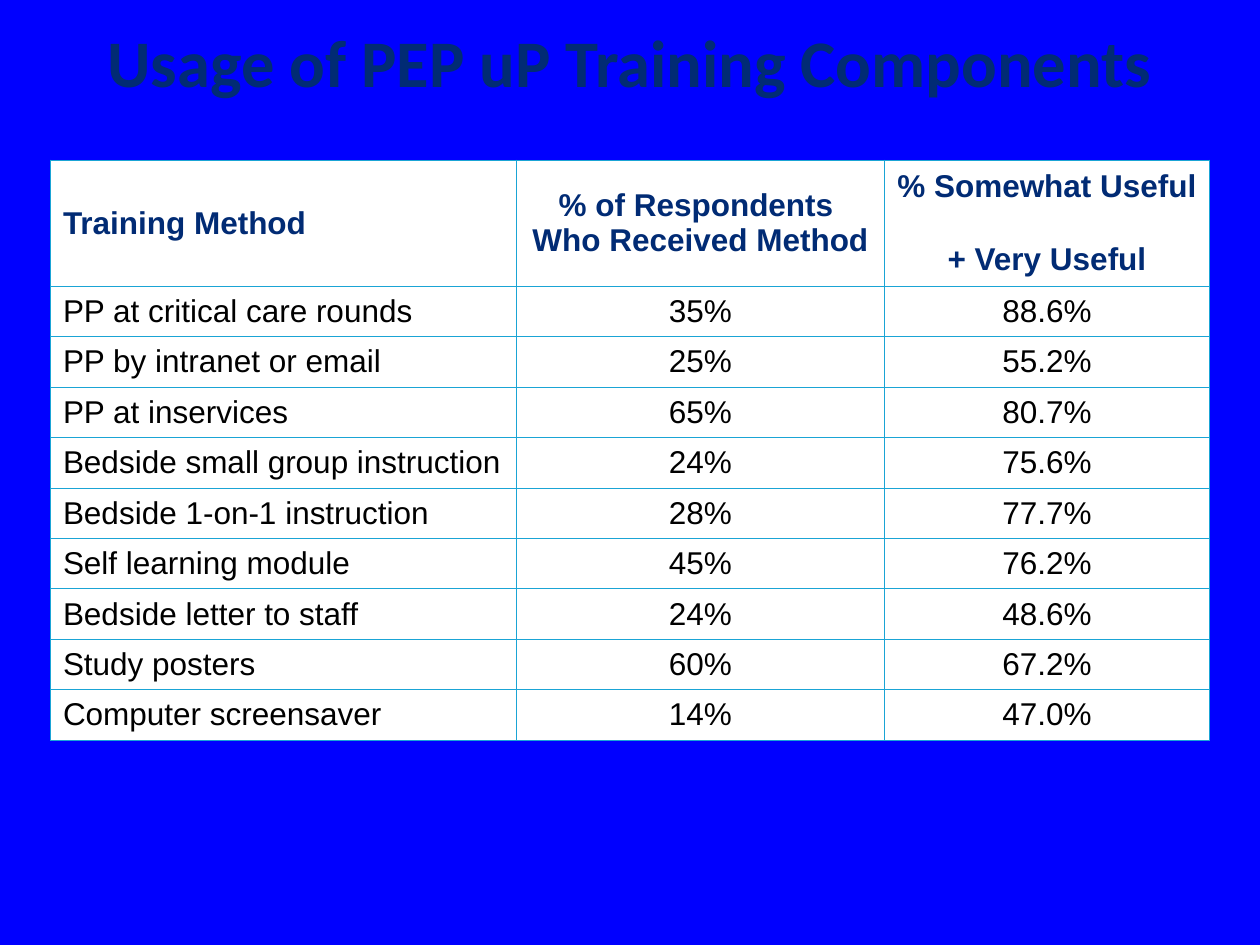
"""Build a slide with a table on the usage of training components."""
from lxml.etree import SubElement
from pptx import Presentation
from pptx.dml.color import RGBColor
from pptx.enum.text import MSO_ANCHOR as ANCHOR, PP_ALIGN as ALIGN
from pptx.oxml.ns import qn
from pptx.util import Pt

NAVY, WHITE, BLACK, BORDER, BLUE = "012B74", "FFFFFF", "000000", "1AA4D5", "0000FF"


def write(tf, text, size=18, font="Arial", color=BLACK, bold=False, align=None, spacing=None):
    tf.text = text
    for p in tf.paragraphs:
        p.alignment, p.line_spacing = align, spacing
        for r in p.runs:
            r.font.size, r.font.name, r.font.bold = Pt(size), font, bold
            r.font.color.rgb = RGBColor.from_string(color)


def style_cell(cell):
    cell.vertical_anchor = ANCHOR.MIDDLE
    cell.margin_left = cell.margin_right = Pt(7.2)
    cell.margin_top = cell.margin_bottom = Pt(3.6)
    tcPr = cell._tc.get_or_add_tcPr()
    for side in ("a:lnL", "a:lnR", "a:lnT", "a:lnB"):
        ln = SubElement(tcPr, qn(side), w=str(Pt(0.5)))
        SubElement(SubElement(ln, qn("a:solidFill")), qn("a:srgbClr"), val=BORDER)
    cell.fill.solid()
    cell.fill.fore_color.rgb = RGBColor.from_string(WHITE)


prs = Presentation()
prs.slide_width, prs.slide_height = Pt(720), Pt(540)
s = prs.slides.add_slide(prs.slide_layouts[6])
s.background.fill.solid()
s.background.fill.fore_color.rgb = RGBColor.from_string(BLUE)

tf = s.shapes.add_textbox(Pt(0), Pt(13), Pt(720), Pt(50.4)).text_frame
tf.word_wrap = True
tf.vertical_anchor = ANCHOR.MIDDLE
write(tf, "Usage of PEP uP Training Components", size=38, font="Calibri",
      color=NAVY, bold=True, align=ALIGN.CENTER, spacing=0.85)

rows = [
    ("Training Method", "% of Respondents \nWho Received Method", "% Somewhat Useful \v+ Very Useful"),
    ("PP at critical care rounds", "35%", "88.6%"),
    ("PP by intranet or email", "25%", "55.2%"),
    ("PP at inservices", "65%", "80.7%"),
    ("Bedside small group instruction", "24%", "75.6%"),
    ("Bedside 1-on-1 instruction", "28%", "77.7%"),
    ("Self learning module", "45%", "76.2%"),
    ("Bedside letter to staff", "24%", "48.6%"),
    ("Study posters", "60%", "67.2%"),
    ("Computer screensaver", "14%", "47.0%"),
]
widths = [266.4, 210.2, 185.8]
heights = [67.4] + [27.36] * (len(rows) - 1)
table = s.shapes.add_table(len(rows), len(widths), Pt(28.8), Pt(91.5),
                           Pt(sum(widths)), Pt(sum(heights))).table
table.horz_banding = False
for col, width in zip(table.columns, widths):
    col.width = Pt(width)
for i, (texts, height) in enumerate(zip(rows, heights)):
    table.rows[i].height = Pt(height)
    for j, text in enumerate(texts):
        cell = table.cell(i, j)
        style_cell(cell)
        write(cell.text_frame, text, color=BLACK if i else NAVY, bold=i == 0,
              align=ALIGN.CENTER if j else ALIGN.LEFT)

prs.save("out.pptx")
